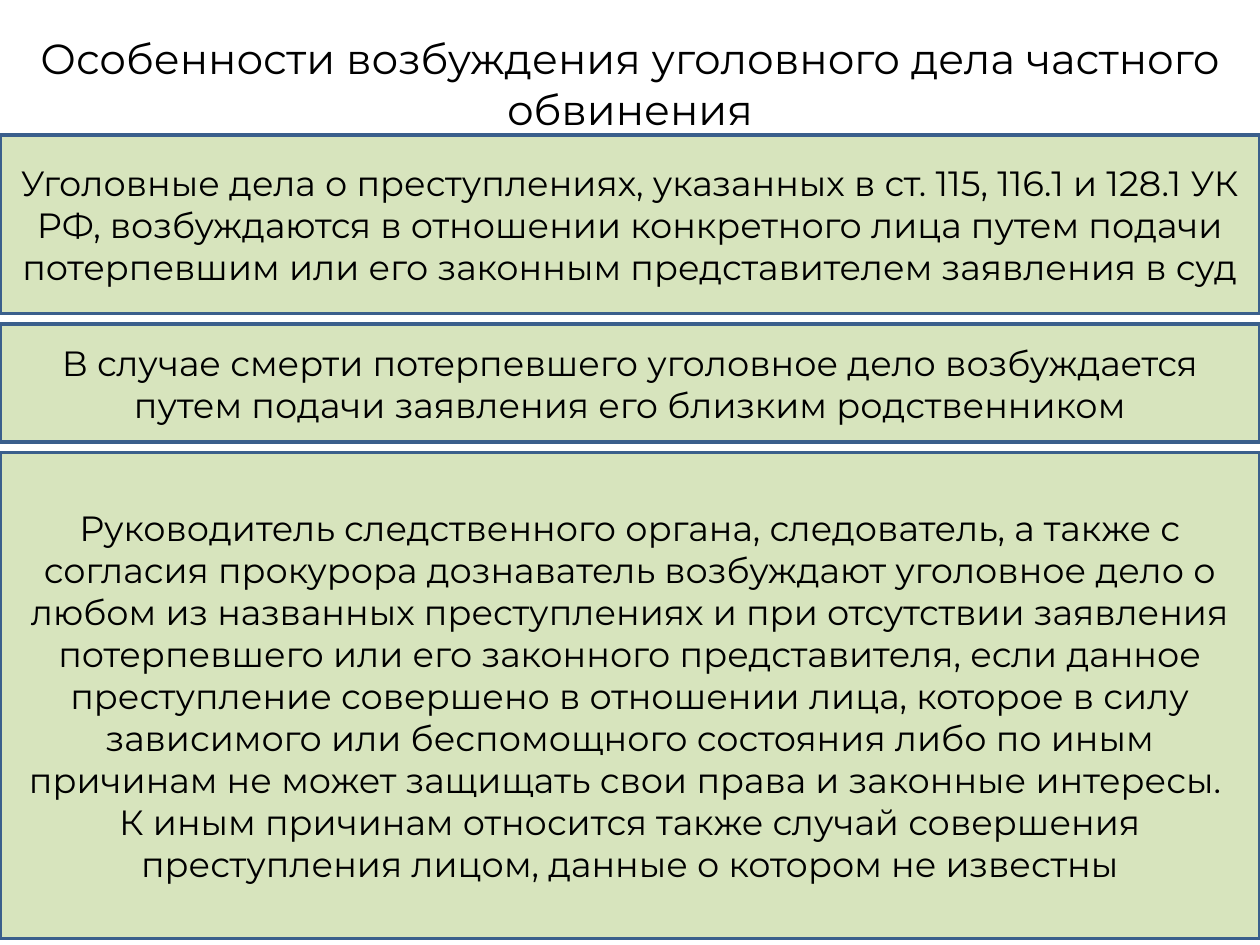
from dataclasses import dataclass

from pptx import Presentation
from pptx.dml.color import RGBColor
from pptx.enum.shapes import MSO_SHAPE as Shape
from pptx.enum.text import MSO_ANCHOR as Anchor, MSO_AUTO_SIZE as AutoSize, PP_ALIGN as Align
from pptx.slide import Slide
from pptx.text.text import TextFrame
from pptx.util import Inches, Pt

WIDTH, HEIGHT = 10, 7.5
FONT = "Montserrat"
BLACK, GREEN, BLUE = "000000", "D7E4BD", "3A5F8C"
FIRST_TOP, GAP = 1.07, 0.08

HEADING = "Особенности возбуждения уголовного дела частного обвинения"


@dataclass
class Rule:
    height: float
    paragraphs: list[str]


RULES = [
    Rule(1.42, [
        "Уголовные дела о преступлениях, указанных в ст. 115, 116.1 и 128.1 УК РФ, "
        "возбуждаются в отношении конкретного лица путем подачи потерпевшим или его "
        "законным представителем заявления в суд",
    ]),
    Rule(0.94, [
        "В случае смерти потерпевшего уголовное дело возбуждается путем подачи "
        "заявления его близким родственником",
    ]),
    Rule(3.86, [
        "Руководитель следственного органа, следователь, а также с согласия прокурора "
        "дознаватель возбуждают уголовное дело о любом из названных преступлениях и при "
        "отсутствии заявления потерпевшего или его законного представителя, если данное "
        "преступление совершено в отношении лица, которое в силу зависимого или "
        "беспомощного состояния либо по иным причинам не может защищать свои права и "
        "законные интересы. ",
        "К иным причинам относится также случай совершения преступления лицом, данные "
        "о котором не известны",
    ]),
]


def color(value: str) -> RGBColor:
    return RGBColor.from_string(value)


def write(frame: TextFrame, paragraphs: list[str], size: float) -> None:
    frame.word_wrap = True
    frame.text = "\n".join(paragraphs)
    for paragraph in frame.paragraphs:
        paragraph.alignment = Align.CENTER
        paragraph.font.name = FONT
        paragraph.font.size = Pt(size)
        paragraph.font.color.rgb = color(BLACK)


def add_heading(slide: Slide) -> None:
    heading = slide.shapes.add_textbox(0, Inches(0.21), Inches(WIDTH), Inches(0.91))
    write(heading.text_frame, [HEADING], 24)
    heading.text_frame.auto_size = AutoSize.SHAPE_TO_FIT_TEXT


def add_rule(slide: Slide, rule: Rule, top: float) -> None:
    panel = slide.shapes.add_shape(
        Shape.RECTANGLE, 0, Inches(top), Inches(WIDTH), Inches(rule.height))
    panel.shadow.inherit = False
    panel.fill.solid()
    panel.fill.fore_color.rgb = color(GREEN)
    panel.line.color.rgb = color(BLUE)
    panel.line.width = Pt(2)
    panel.text_frame.vertical_anchor = Anchor.MIDDLE
    write(panel.text_frame, rule.paragraphs, 20)


def main() -> None:
    presentation = Presentation()
    presentation.slide_width = Inches(WIDTH)
    presentation.slide_height = Inches(HEIGHT)
    slide = presentation.slides.add_slide(presentation.slide_layouts[6])

    # Heading
    add_heading(slide)

    # Rules stacked with equal gaps
    top = FIRST_TOP
    for rule in RULES:
        add_rule(slide, rule, top)
        top += rule.height + GAP

    presentation.save("out.pptx")


if __name__ == "__main__":
    main()
